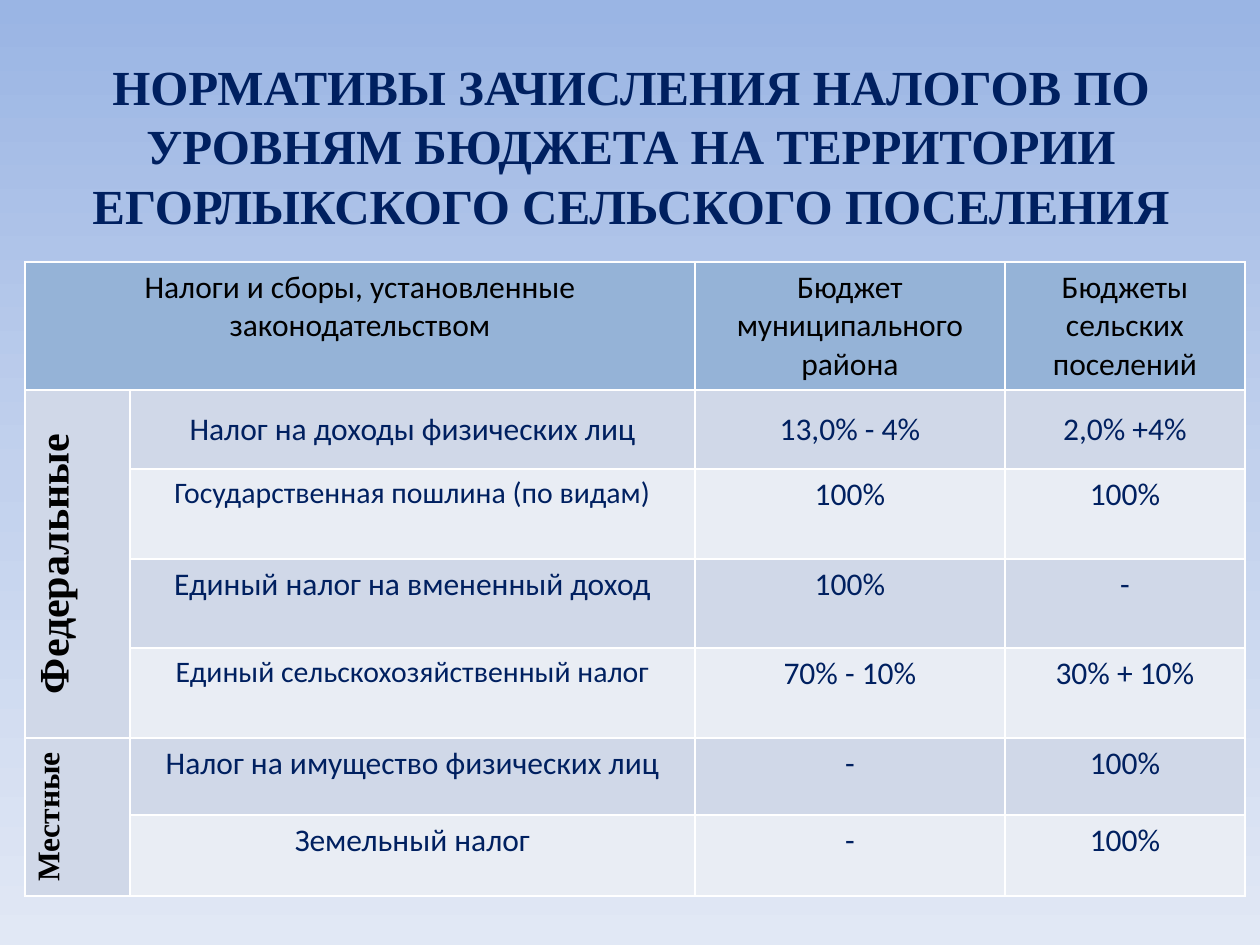
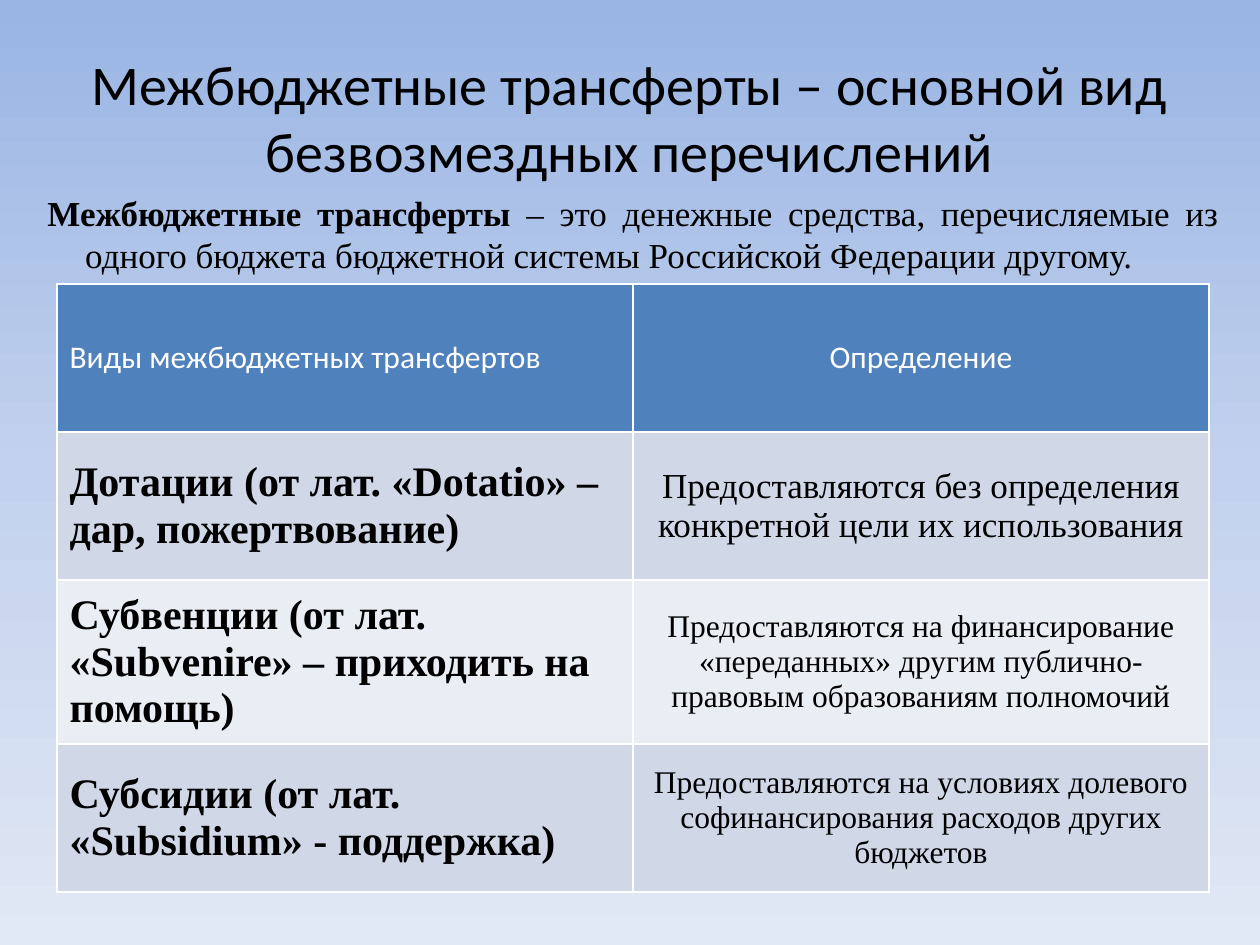
from copy import deepcopy

from lxml import etree
from pptx import Presentation
from pptx import util as u
from pptx.dml.color import RGBColor
from pptx.enum import text
from pptx.oxml.ns import qn

# Shared scale, fonts and colours
PX = 914400 // 126
SANS, SERIF = "Calibri", "Times New Roman"
NAVY, BLACK, WHITE = "002060", "000000", "FFFFFF"
BACKGROUND = [(0, "9AB5E4"), (0.5, "C2D1ED"), (1, "E1E8F5")]
BANDS = ["D0D8E8", "E9EDF4"]
RATES_HEADER, TRANSFERS_HEADER = "95B3D7", "4F81BD"

LEFT, CENTER = text.PP_ALIGN.LEFT, text.PP_ALIGN.CENTER
TOP, MIDDLE = text.MSO_ANCHOR.TOP, text.MSO_ANCHOR.MIDDLE

# Slide content
RATES = [
    ("Налог на доходы физических лиц", "13,0% - 4%", "2,0% +4%"),
    ("Государственная пошлина (по видам)", "100%", "100%"),
    ("Единый налог на вмененный доход", "100%", "-"),
    ("Единый сельскохозяйственный налог", "70% - 10%", "30% + 10%"),
    ("Налог на имущество физических лиц", "-", "100%"),
    ("Земельный налог", "-", "100%"),
]
SMALLER_TAX_ROWS = (2, 4)
# Level name, first row, last row, text size, anchor
TAX_LEVELS = [("Федеральные", 1, 4, 24, TOP), ("Местные", 5, 6, 18, MIDDLE)]

# Kind of transfer, definition, size of the definition
TRANSFERS = [
    ("Дотации (от лат. «Dotatio» – дар, пожертвование)",
     "Предоставляются без определения конкретной цели их использования", 20),
    ("Субвенции (от лат. «Subvenire» – приходить на помощь)",
     "Предоставляются на финансирование «переданных» другим "
     "публично-правовым образованиям полномочий", 18),
    ("Субсидии (от лат. «Subsidium» - поддержка)",
     "Предоставляются на условиях долевого софинансирования "
     "расходов других бюджетов", 18),
]


def color(hex_code):
    return RGBColor.from_string(hex_code)


def px(*lengths):
    return [u.Emu(length * PX) for length in lengths]


def style_span(span, size, font=SANS, ink=BLACK, bold=False):
    span.font.size = u.Pt(size)
    span.font.name = font
    span.font.bold = bold
    span.font.color.rgb = color(ink)


def set_background(master):
    fill = master.background.fill
    fill.gradient()
    fill.gradient_angle = 270
    stop_list = master.element.find(".//" + qn("a:gsLst"))
    stop_list.insert(1, deepcopy(stop_list[0]))
    for stop, (position, hex_code) in zip(fill.gradient_stops, BACKGROUND):
        stop.position = position
        stop.color.rgb = color(hex_code)


def add_page(deck, title, place, line=None, **style):
    page = deck.slides.add_slide(deck.slide_layouts[5])
    box = page.shapes.title
    box.left, box.top, box.width, box.height = px(*place)
    frame = box.text_frame
    frame.text = title
    frame.word_wrap = True
    frame.auto_size = text.MSO_AUTO_SIZE.NONE
    frame.vertical_anchor = MIDDLE
    para = frame.paragraphs[0]
    para.alignment = CENTER
    if line:
        para.line_spacing = u.Pt(line)
    style_span(para.runs[0], **style)
    return page


def set_borders(cell):
    properties = cell._tc.get_or_add_tcPr()
    for index, side in enumerate(("lnL", "lnR", "lnT", "lnB")):
        line = etree.Element(qn("a:" + side), w=str(u.Pt(1)))
        fill = etree.SubElement(line, qn("a:solidFill"))
        etree.SubElement(fill, qn("a:srgbClr"), val=WHITE)
        properties.insert(index, line)


def add_grid(page, left, top, columns, rows, header_fill):
    """Add a table with a header row and banded rows below it."""
    place = px(left, top, sum(columns), sum(rows))
    table = page.shapes.add_table(len(rows), len(columns), *place).table
    for column, width in zip(table.columns, px(*columns)):
        column.width = width
    for index, (row, height) in enumerate(zip(table.rows, px(*rows))):
        row.height = height
        for cell in row.cells:
            cell.fill.solid()
            band = BANDS[(index - 1) % 2] if index else header_fill
            cell.fill.fore_color.rgb = color(band)
            set_borders(cell)
    return table


def fill_cell(cell, words, align=CENTER, anchor=TOP, **style):
    cell.text = words
    cell.vertical_anchor = anchor
    para = cell.text_frame.paragraphs[0]
    para.alignment = align
    style_span(para.runs[0], **style)


def add_definition(page, place, term, rest):
    """Add a justified paragraph with a hanging indent and a bold term."""
    frame = page.shapes.add_textbox(*px(*place)).text_frame
    frame.word_wrap = True
    para = frame.paragraphs[0]
    para.alignment = text.PP_ALIGN.JUSTIFY
    para.line_spacing = u.Pt(24)
    indent = u.Inches(0.3)
    properties = para._p.get_or_add_pPr()
    properties.set("marL", str(indent))
    properties.set("indent", str(-indent))
    for words, bold in ((term, True), (rest, False)):
        span = para.add_run()
        span.text = words
        style_span(span, 20, SERIF, bold=bold)


def add_rates_page(deck):
    page = add_page(
        deck,
        "НОРМАТИВЫ ЗАЧИСЛЕНИЯ НАЛОГОВ ПО УРОВНЯМ БЮДЖЕТА "
        "НА ТЕРРИТОРИИ ЕГОРЛЫКСКОГО СЕЛЬСКОГО ПОСЕЛЕНИЯ",
        (64, 26, 1134, 238), line=34, size=28, font=SERIF, ink=NAVY, bold=True)
    table = add_grid(page, 25, 262, [105, 565, 310, 240],
                     [128, 79, 90, 89, 90, 77, 81], RATES_HEADER)

    # Header
    table.cell(0, 0).merge(table.cell(0, 1))
    headings = {0: "Налоги и сборы, установленные законодательством",
                2: "Бюджет муниципального района",
                3: "Бюджеты сельских поселений"}
    for column, heading in headings.items():
        fill_cell(table.cell(0, column), heading, size=18)

    # Tax levels, read from bottom to top
    for level, first, last, size, anchor in TAX_LEVELS:
        cell = table.cell(first, 0)
        cell.merge(table.cell(last, 0))
        fill_cell(cell, level, anchor=anchor, size=size, font=SERIF, bold=True)
        cell._tc.get_or_add_tcPr().set("vert", "vert270")

    # Taxes and their shares
    for row, values in enumerate(RATES, 1):
        for column, words in enumerate(values, 1):
            smaller = column == 1 and row in SMALLER_TAX_ROWS
            fill_cell(table.cell(row, column), words,
                      anchor=MIDDLE if row == 1 else TOP,
                      size=17 if smaller else 18, ink=NAVY)


def add_transfers_page(deck):
    page = add_page(
        deck,
        "Межбюджетные трансферты – основной вид безвозмездных перечислений",
        (63, 38, 1134, 158), size=32)
    add_definition(
        page, (35, 185, 1196, 97), "Межбюджетные трансферты ",
        "– это денежные средства, перечисляемые из одного бюджета "
        "бюджетной системы Российской Федерации другому.")
    table = add_grid(page, 57, 284, [576, 576], [148, 148, 163, 148],
                     TRANSFERS_HEADER)

    # Header
    headings = [("Виды межбюджетных трансфертов", LEFT), ("Определение", CENTER)]
    for column, (heading, align) in enumerate(headings):
        fill_cell(table.cell(0, column), heading, align, MIDDLE,
                  size=18, ink=WHITE)

    # Kinds of transfer and their definitions
    for row, (kind, definition, size) in enumerate(TRANSFERS, 1):
        fill_cell(table.cell(row, 0), kind, LEFT, MIDDLE,
                  size=24, font=SERIF, bold=True)
        fill_cell(table.cell(row, 1), definition, CENTER, MIDDLE,
                  size=size, font=SERIF)


def main():
    deck = Presentation()
    deck.slide_width, deck.slide_height = px(1260, 945)
    set_background(deck.slide_master)
    add_rates_page(deck)
    add_transfers_page(deck)
    deck.save("out.pptx")


if __name__ == "__main__":
    main()
